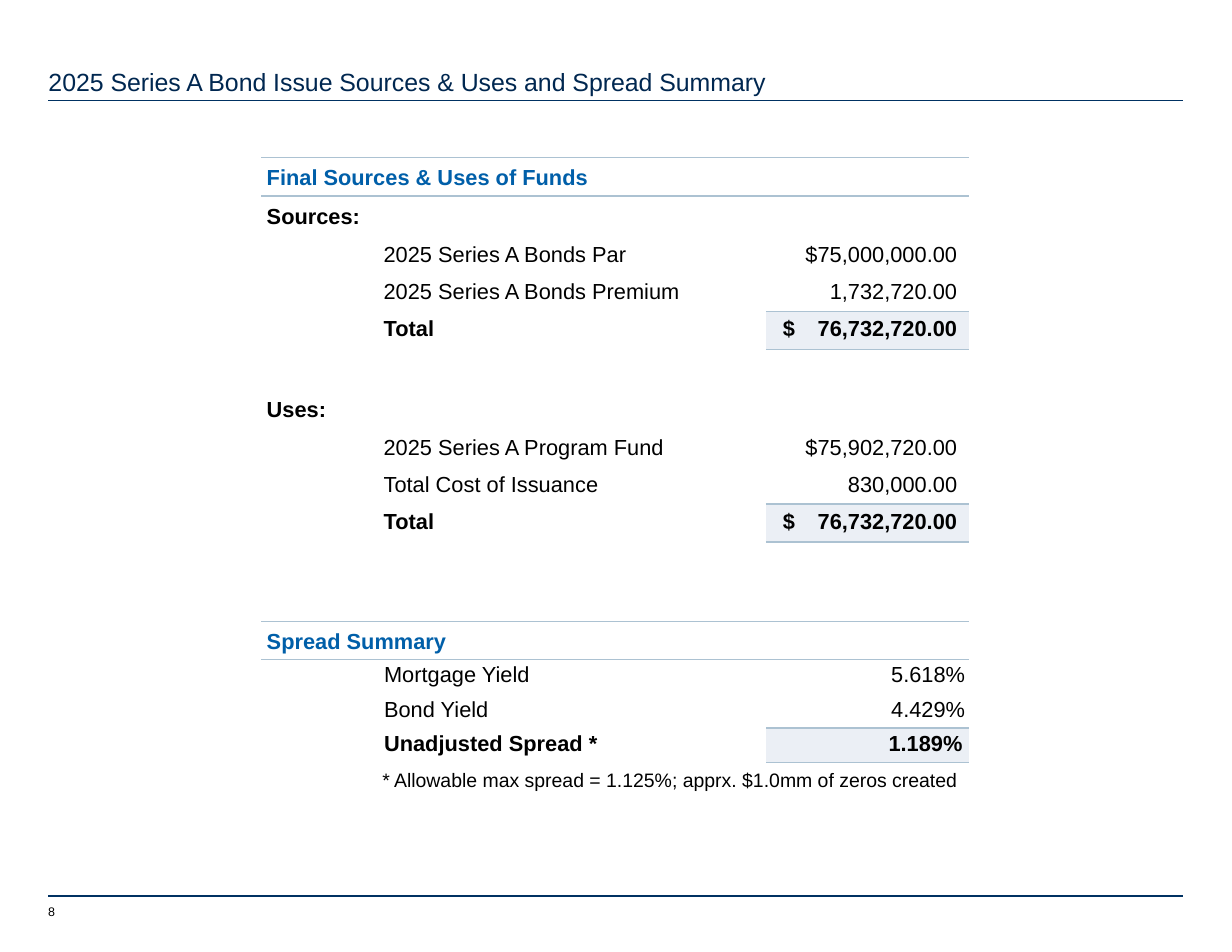
from lxml import etree
from pptx import Presentation
from pptx.dml.color import RGBColor
from pptx.enum.shapes import MSO_CONNECTOR
from pptx.enum.text import PP_ALIGN
from pptx.oxml.ns import qn
from pptx.util import Cm, Pt

STRAIGHT = MSO_CONNECTOR.STRAIGHT
LEFT, RIGHT = PP_ALIGN.LEFT, PP_ALIGN.RIGHT
COLORS = {"navy": "003162", "title": "002750", "heading": "005FA9",
          "text": "000000", "rule": "ACC2D2", "total": "EBEFF5"}


class Deck:
    """Holds the style and the slide being built."""

    font = "Arial"

    def __init__(self, prs):
        self.s = prs.slides.add_slide(prs.slide_layouts[6])

    def color(self, name):
        return RGBColor.from_string(COLORS[name])

    def style(self, p, size, color, bold=False):
        for r in p.runs:
            r.font.name, r.font.size, r.font.bold = self.font, Pt(size), bold
            r.font.color.rgb = self.color(color)

    def rule(self, x, y, width, color, weight):
        line = self.s.shapes.add_connector(STRAIGHT, Cm(x), Cm(y), Cm(x + width), Cm(y))
        line.line.color.rgb = self.color(color)
        line.line.width = Pt(weight)
        etree.SubElement(line._element.spPr, qn("a:effectLst"))

    def text(self, x, y, w, h, lines, size=14, bold=False, spacing=None):
        """Lines are (wording, colour) pairs, one paragraph each."""
        tf = self.s.shapes.add_textbox(Cm(x), Cm(y), Cm(w), Cm(h)).text_frame
        tf.word_wrap = True
        tf.margin_left = Cm(0.03)
        tf.margin_top = Cm(0.08)
        tf.margin_right = tf.margin_bottom = 0
        tf.text = "\n".join(wording for wording, _ in lines)
        for p, (_, color) in zip(tf.paragraphs, lines):
            if spacing:
                p.line_spacing = spacing
            self.style(p, size, color, bold)

    def borders(self, cell, top, bottom):
        tcPr = cell._tc.get_or_add_tcPr()
        sides = {"lnL": False, "lnR": False, "lnT": top, "lnB": bottom}
        for i, (side, shown) in enumerate(sides.items()):
            ln = etree.Element(qn("a:" + side), w=str(Pt(1)))
            if shown:
                fill = etree.SubElement(ln, qn("a:solidFill"))
                etree.SubElement(fill, qn("a:srgbClr"), val=COLORS["rule"])
            else:
                etree.SubElement(ln, qn("a:noFill"))
            tcPr.insert(i, ln)

    def table(self, x, y, cols, heights, rows, indent, tops, rights, top_rule=False):
        """Label and amount columns; the last row is the shaded total."""
        frame = self.s.shapes.add_table(len(rows), 2, Cm(x), Cm(y),
                                        Cm(sum(cols)), Cm(sum(heights)))
        table = frame.table
        table.first_row = table.horz_banding = False
        for column, width in zip(table.columns, cols):
            column.width = Cm(width)
        last = len(rows) - 1
        for i, row in enumerate(rows):
            table.rows[i].height = Cm(heights[i])
            for j, wording in enumerate(row):
                cell = table.cell(i, j)
                cell.margin_left = Cm(0 if j else indent)
                cell.margin_top = Cm(tops[i])
                cell.margin_right = Cm(rights[i] if j else 0)
                cell.margin_bottom = 0
                p = cell.text_frame.paragraphs[0]
                if "\t" in wording:
                    tabs = etree.SubElement(p._p.get_or_add_pPr(), qn("a:tabLst"))
                    etree.SubElement(tabs, qn("a:tab"), pos=str(Cm(0.79)), algn="l")
                p.alignment = RIGHT if j else LEFT
                p.text = wording
                if tops[i] == 0:
                    p.line_spacing = Pt(15.7)
                self.style(p, 14, "text", i == last)
                if j and i == last:
                    cell.fill.solid()
                    cell.fill.fore_color.rgb = self.color("total")
                else:
                    cell.fill.background()
                self.borders(cell, (i == 0 and top_rule) or (j == 1 and i == last),
                             j == 1 and i >= last - 1)


def main():
    prs = Presentation()
    prs.slide_width, prs.slide_height = Cm(27.94), Cm(21.59)
    deck = Deck(prs)

    # Page frame and title
    for y in (20.32, 2.28):
        deck.rule(1.09, y, 25.74, "navy", 0.75)
    deck.text(1.07, 1.43, 16.4, 0.74,
              [("2025 Series A Bond Issue Sources & Uses and Spread Summary", "title")], 16)

    # Sources and uses of funds
    funds = {
        5.51: [("2025 Series A Bonds Par", "$75,000,000.00"),
               ("2025 Series A Bonds Premium", "1,732,720.00"),
               ("Total", "$\t76,732,720.00")],
        9.88: [("2025 Series A Program Fund", "$75,902,720.00"),
               ("Total Cost of Issuance", "830,000.00"),
               ("Total", "$\t76,732,720.00")],
    }
    for y, rows in funds.items():
        deck.table(8.61, y, (8.76, 4.6), (0.71, 0.84, 0.86), rows,
                   0.09, (0, 0.12, 0.12), (0.26, 0.26, 0.26))

    # Spread summary
    deck.table(5.92, 14.96, (11.46, 4.6), (0.79, 0.76, 0.79),
               [("Mortgage Yield", "5.618%"), ("Bond Yield", "4.429%"),
                ("Unadjusted Spread *", "1.189%")],
               2.79, (0.08, 0.08, 0.08), (0.09, 0.09, 0.15), top_rule=True)

    # Headings and footnote
    deck.text(6.02, 3.35, 7.47, 1.83,
              [("Final Sources & Uses of Funds", "heading"), ("Sources:", "text")],
              bold=True, spacing=1.48)
    deck.text(6.02, 8.9, 1.5, 0.66, [("Uses:", "text")], bold=True)
    deck.text(6.02, 14.16, 4.3, 0.66, [("Spread Summary", "heading")], bold=True)
    deck.text(8.64, 17.34, 13.08, 0.61,
              [("* Allowable max spread = 1.125%; apprx. $1.0mm of zeros created", "text")], 12.5)

    # Section rules
    for y in (3.57, 4.44, 14.09):
        deck.rule(5.92, y, 16.06, "rule", 1)

    # Page number
    deck.text(1.06, 20.42, 0.5, 0.38, [("8", "text")], 8)

    prs.save("out.pptx")


if __name__ == "__main__":
    main()
